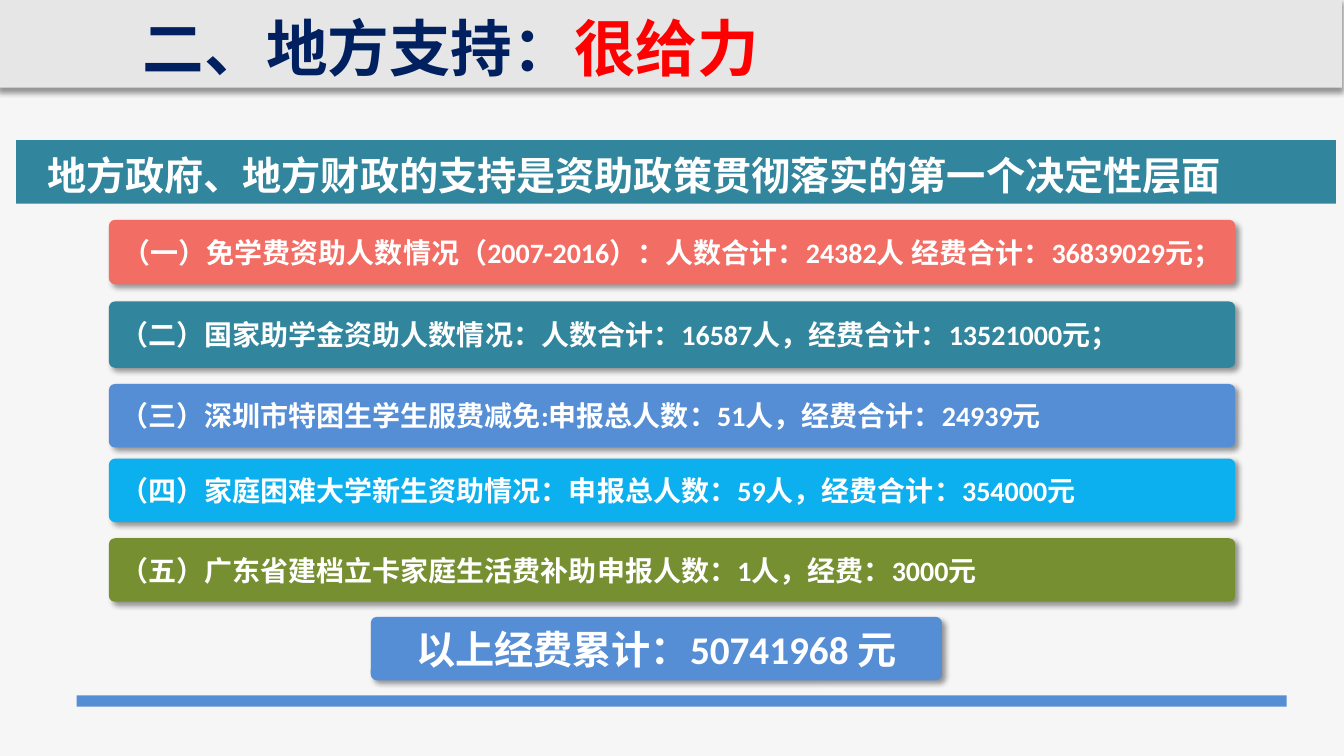
from dataclasses import dataclass

from lxml.etree import SubElement
from pptx import Presentation
from pptx.dml.color import RGBColor
from pptx.enum.shapes import MSO_SHAPE as Shape
from pptx.enum.text import MSO_ANCHOR as Anchor, PP_ALIGN as Align
from pptx.oxml.ns import qn
from pptx.util import Inches, Pt


@dataclass(frozen=True)
class Theme:
    page: str = "F6F6F6"
    header: str = "E6E6E6"
    navy: str = "002060"
    red: str = "FF0000"
    white: str = "FFFFFF"
    teal: str = "31859C"
    coral: str = "F26D64"
    blue: str = "558ED5"
    sky: str = "0CB0EE"
    olive: str = "768F31"
    shadow: str = "000000"
    title_size: int = 44
    lead_size: int = 28
    item_size: int = 20
    latin: str = "Calibri"
    chinese: str = "Noto Sans CJK SC"


class SlideBuilder:
    """Draws styled elements on one slide, placed in percent of its width and height."""

    def __init__(self, deck, theme):
        self.theme = theme
        self.width, self.height = deck.slide_width, deck.slide_height
        self.page = deck.slides.add_slide(deck.slide_layouts[6])
        fill = self.page.background.fill
        fill.solid()
        fill.fore_color.rgb = RGBColor.from_string(theme.page)

    def place(self, left, top, width, height):
        return (round(self.width * left / 100), round(self.height * top / 100),
                round(self.width * width / 100), round(self.height * height / 100))

    def add_shadow(self, box, angle):
        effects = box._element.spPr.find(qn("a:effectLst"))
        shadow = SubElement(effects, qn("a:outerShdw"), blurRad=str(Pt(4)), dist=str(Pt(3)),
                            dir=str(angle * 60000), algn="ctr", rotWithShape="0")
        color = SubElement(shadow, qn("a:srgbClr"), val=self.theme.shadow)
        SubElement(color, qn("a:alpha"), val="40000")

    def bar(self, area, color, kind=Shape.RECTANGLE, shadow_angle=None):
        box = self.page.shapes.add_shape(kind, *self.place(*area))
        box.shadow.inherit = False
        box.fill.solid()
        box.fill.fore_color.rgb = RGBColor.from_string(color)
        box.line.fill.background()
        if shadow_angle is not None:
            self.add_shadow(box, shadow_angle)
        return box

    def set_text(self, box, spans, size, latin, align=Align.LEFT):
        box.text_frame.word_wrap = True
        para = box.text_frame.paragraphs[0]
        para.alignment = align
        para.font.name, para.font.size, para.font.bold = latin, Pt(size), True
        para.font.color.rgb = RGBColor.from_string(self.theme.white)
        defaults = para._p.pPr.find(qn("a:defRPr"))
        defaults.find(qn("a:latin")).addnext(
            SubElement(defaults, qn("a:ea"), typeface=self.theme.chinese))
        for text, color in spans:
            span = para.add_run()
            span.text = text
            if color:
                span.font.color.rgb = RGBColor.from_string(color)

    def label(self, area, spans, size):
        box = self.page.shapes.add_textbox(*self.place(*area))
        self.set_text(box, spans, size, self.theme.chinese)

    def card(self, area, color, text, size, align=Align.LEFT):
        box = self.bar(area, color, Shape.ROUNDED_RECTANGLE, shadow_angle=45)
        box.adjustments[0] = 0.096
        box.text_frame.vertical_anchor = Anchor.MIDDLE
        self.set_text(box, [(text, None)], size, self.theme.latin, align)


def main():
    theme = Theme()
    deck = Presentation()
    deck.slide_width, deck.slide_height = Inches(13.34), Inches(7.5)
    slide = SlideBuilder(deck, theme)

    slide.bar((-0.15, -0.4, 100, 12), theme.header, shadow_angle=90)
    slide.bar((1.2, 18.53, 98.2, 8.4), theme.teal)
    slide.label((9.9, 0.67, 89.58, 11.2),
                [("二、地方支持：", theme.navy), ("很给力", theme.red)], theme.title_size)
    slide.label((2.77, 19.33, 95.05, 7.6),
                [("地方政府、地方财政的支持是资助政策贯彻落实的第一个决定性层面", None)],
                theme.lead_size)
    slide.bar((5.7, 92, 90.03, 1.47), theme.blue)

    items = [
        (29.07, 8.53, theme.coral, Align.CENTER,
         "（一）免学费资助人数情况（2007-2016）：人数合计：24382人 经费合计：36839029元；"),
        (39.87, 8.8, theme.teal, Align.LEFT,
         "（二）国家助学金资助人数情况：人数合计：16587人，经费合计：13521000元；"),
        (50.8, 8.4, theme.blue, Align.LEFT,
         "（三）深圳市特困生学生服费减免:申报总人数：51人，经费合计：24939元"),
        (60.67, 8.4, theme.sky, Align.LEFT,
         "（四）家庭困难大学新生资助情况：申报总人数：59人，经费合计：354000元"),
        (71.2, 8.4, theme.olive, Align.LEFT,
         "（五）广东省建档立卡家庭生活费补助申报人数：1人，经费：3000元"),
    ]
    for top, height, color, align, text in items:
        slide.card((8.1, top, 83.81, height), color, text, theme.item_size, align)
    slide.card((27.59, 81.6, 42.5, 8.4), theme.blue, "以上经费累计：50741968 元",
               theme.lead_size, Align.CENTER)

    deck.save("out.pptx")


if __name__ == "__main__":
    main()
